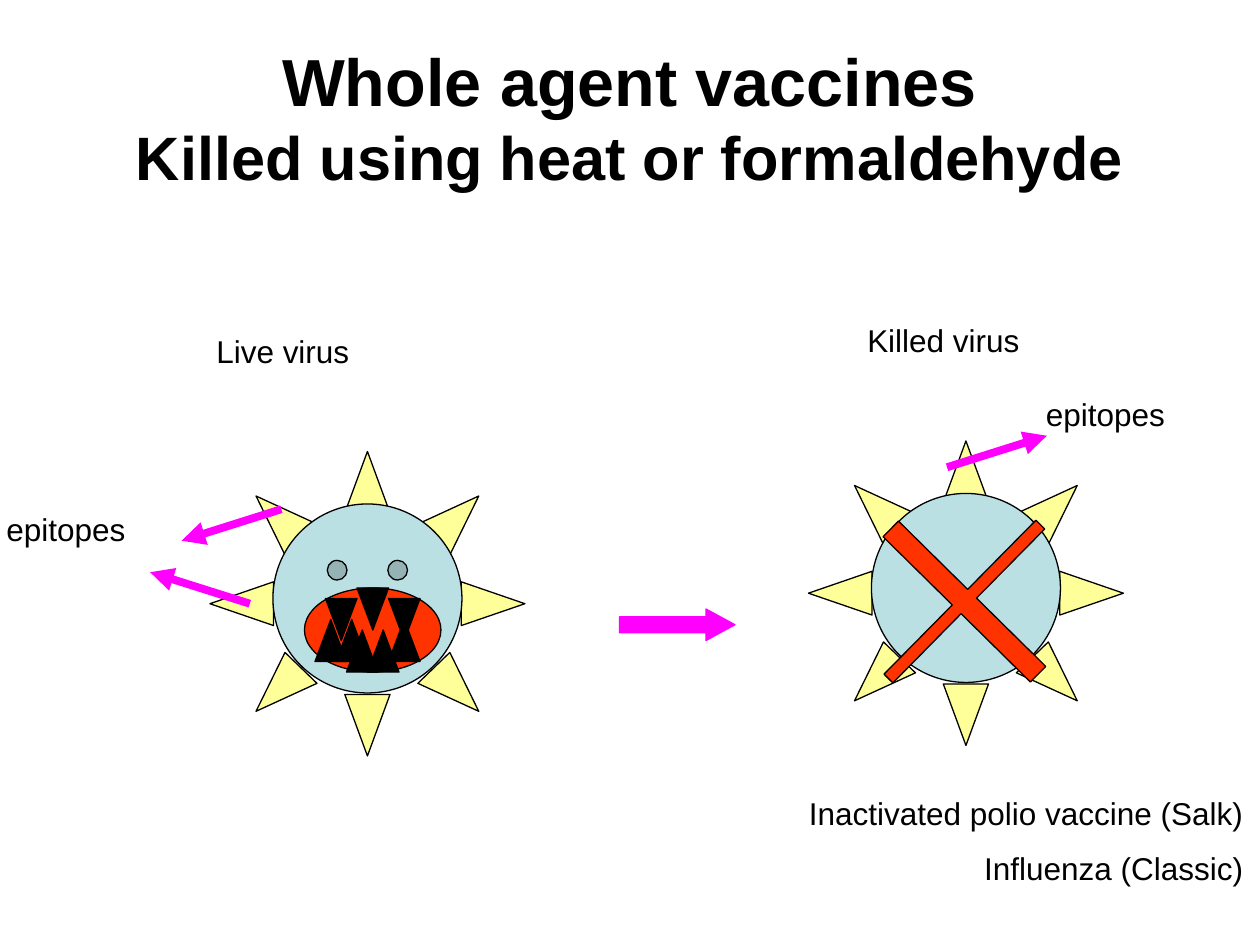
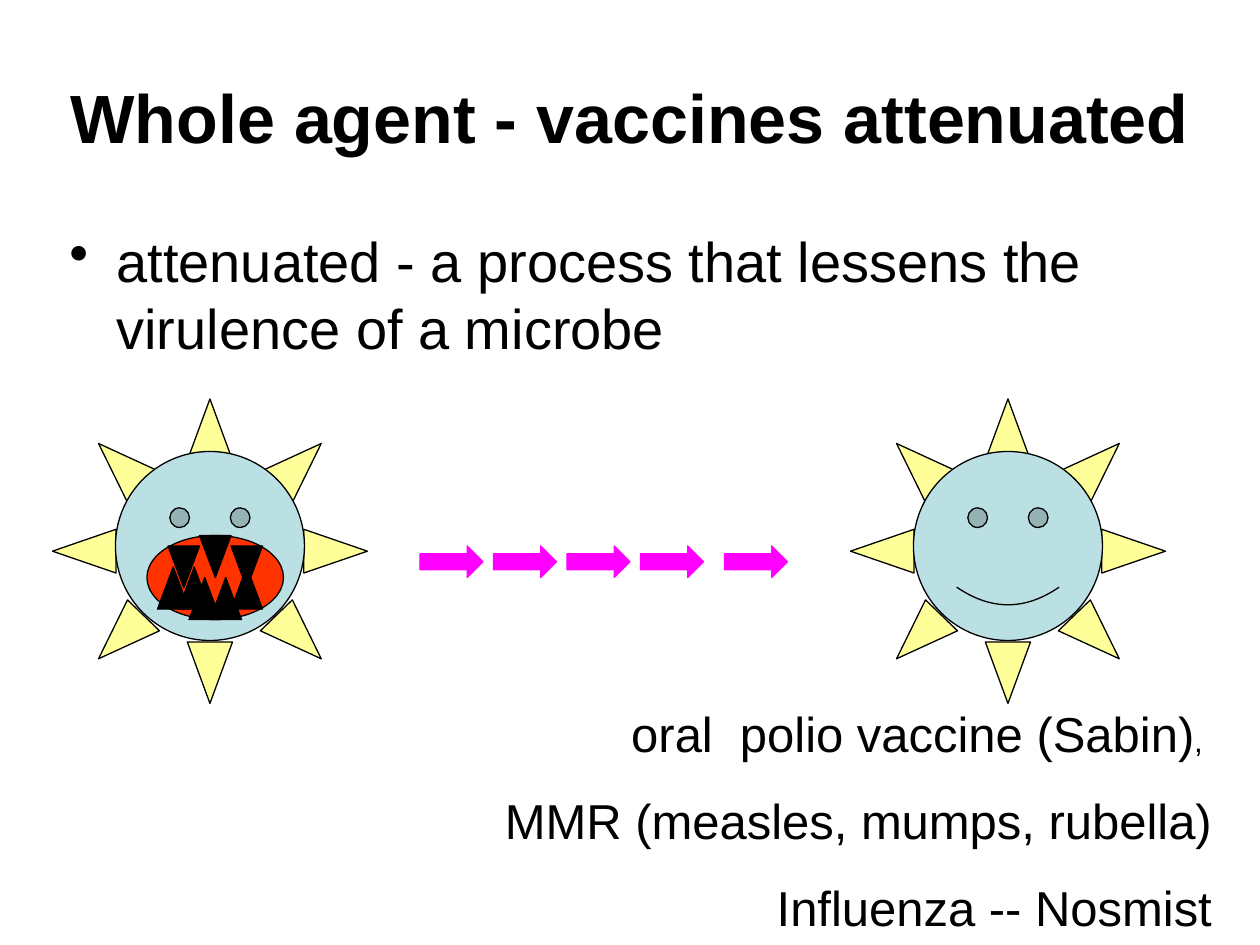
import dataclasses

import lxml.etree
import pptx
import pptx.dml.color
import pptx.enum.shapes
import pptx.enum.text
import pptx.oxml.ns
import pptx.util

PX_PER_INCH = 120
SHAPE = pptx.enum.shapes.MSO_SHAPE
ALIGN = pptx.enum.text.PP_ALIGN
ANCHOR = pptx.enum.text.MSO_ANCHOR


@dataclasses.dataclass(frozen=True)
class Theme:
    font: str = "Arial"
    ink: str = "000000"
    spike: str = "FFFF99"
    body: str = "BBE0E3"
    danger: str = "FF3300"
    arrow: str = "FF00FF"
    title: int = 39
    title_top: int = 38
    title_sub: int = 35
    bullet: int = 32
    example: int = 28
    label: int = 18
    outline: float = 0.75
    pointer: float = 4.5


def px(n):
    return pptx.util.Emu(n * 914400 // PX_PER_INCH)


def rgb(value):
    return pptx.dml.color.RGBColor.from_string(value)


def sub(parent, tag, **attrs):
    return lxml.etree.SubElement(parent, pptx.oxml.ns.qn(tag), attrs)


class Deck:
    def __init__(self, theme):
        self.theme = theme
        self.prs = pptx.Presentation()
        self.prs.slide_width = px(1200)
        self.prs.slide_height = px(900)

    def new_slide(self):
        self.s = self.prs.slides.add_slide(self.prs.slide_layouts[6])
        self.shapes = self.s.shapes

    def start_group(self):
        self.shapes = self.s.shapes.add_group_shape().shapes

    def end_group(self):
        self.shapes = self.s.shapes

    def text(self, box, paragraphs, size=None, bold=False, align=ALIGN.LEFT,
             anchor=ANCHOR.TOP, before=0, wrap=True, bullet=False):
        sp = self.shapes.add_textbox(*map(px, box))
        tf = sp.text_frame
        tf.word_wrap = wrap
        tf.vertical_anchor = anchor
        tf.margin_left = tf.margin_right = tf.margin_top = tf.margin_bottom = px(6)
        for i, runs in enumerate(paragraphs):
            p = tf.paragraphs[0] if i == 0 else tf.add_paragraph()
            p.alignment = align
            p.space_before = pptx.util.Pt(before)
            if bullet:
                pPr = p._p.get_or_add_pPr()
                pPr.set("marL", str(px(45)))
                pPr.set("indent", str(px(-45)))
                sub(pPr, "a:buChar", char="•")
            for item in [runs] if isinstance(runs, str) else runs:
                if item == "\n":
                    p.add_line_break()
                    continue
                words, points = (item, size) if isinstance(item, str) else item
                r = p.add_run()
                r.text = words
                r.font.name = self.theme.font
                r.font.size = pptx.util.Pt(points)
                r.font.bold = bold
                r.font.color.rgb = rgb(self.theme.ink)
        return sp

    def title(self, box, runs):
        self.text(box, [runs], size=self.theme.title, bold=True,
                  align=ALIGN.CENTER, anchor=ANCHOR.MIDDLE)

    def label(self, box, words, **fmt):
        self.text(box, [words], size=self.theme.label, **fmt)

    def shape(self, kind, box, fill, line=None, adj=(), rotation=0):
        sp = self.shapes.add_shape(kind, *map(px, box))
        sp.shadow.inherit = False
        sp.fill.solid()
        sp.fill.fore_color.rgb = rgb(fill)
        sp.line.color.rgb = rgb(line or self.theme.ink)
        sp.line.width = pptx.util.Pt(self.theme.outline)
        sp.rotation = rotation
        for i, value in enumerate(adj):
            sp.adjustments[i] = value
        return sp

    def block_arrow(self, box, head):
        self.shape(SHAPE.RIGHT_ARROW, box, self.theme.arrow,
                   line=self.theme.arrow, adj=(0.5, head))

    def pointer(self, x, y, dx, dy):
        cx = self.shapes.add_connector(
            pptx.enum.shapes.MSO_CONNECTOR.STRAIGHT,
            px(x), px(y), px(x + dx), px(y + dy))
        cx.line.color.rgb = rgb(self.theme.arrow)
        cx.line.width = pptx.util.Pt(self.theme.pointer)
        sub(cx.line._get_or_add_ln(), "a:tailEnd", type="triangle")
        sub(cx._element.spPr, "a:effectLst")

    def virus(self, x, y, face=SHAPE.SMILEY_FACE):
        self.shape(SHAPE.SUN, (x, y, 300, 290), self.theme.spike)
        self.shape(face, (x + 60, y + 50, 180, 180), self.theme.body)

    def fierce_virus(self, x, y):
        self.virus(x, y)
        self.shape(SHAPE.OVAL, (x + 90, y + 130, 130, 80), self.theme.danger)
        lower = [(120, 160), (130, 170), (150, 170), (170, 160), (100, 160)]
        upper = [(140, 130), (110, 140), (170, 140)]
        for teeth, rotation in ((lower, 0), (upper, 180)):
            for dx, dy in teeth:
                self.shape(SHAPE.ISOSCELES_TRIANGLE, (x + dx, y + dy, 30, 40),
                           self.theme.ink, rotation=rotation)

    def killed_virus(self, x, y):
        self.virus(x, y, face=SHAPE.OVAL)
        self.shape(SHAPE.CROSS, (x + 50, y + 50, 197, 206), self.theme.danger,
                   adj=(0.47,), rotation=44.6)


def killed_slide(deck):
    t = deck.theme
    deck.new_slide()
    deck.title((0, 36, 1200, 150),
               [("Whole agent vaccines", t.title_top), "\n",
                ("Killed using heat or formaldehyde", t.title_sub)])
    deck.block_arrow((590, 580, 110, 30), head=0.917)
    deck.text((240, 750, 950, 97),
              ["Inactivated polio vaccine (Salk)", "Influenza (Classic)"],
              size=t.label, align=ALIGN.RIGHT, before=10)

    deck.start_group()
    deck.fierce_virus(200, 430)
    deck.pointer(268, 485, -95, 30)
    deck.pointer(238, 575, -95, -30)
    deck.label((0, 480, 210, 45), "epitopes", before=10)
    deck.end_group()

    deck.start_group()
    deck.killed_virus(770, 420)
    deck.pointer(902, 445, 95, -30)
    deck.label((990, 370, 210, 45), "epitopes", before=10)
    deck.end_group()

    deck.label((200, 310, 140, 45), "Live virus", wrap=False)
    deck.label((820, 300, 158, 45), "Killed virus", wrap=False)


def attenuated_slide(deck):
    t = deck.theme
    deck.new_slide()
    deck.title((60, 36, 1080, 150), "Whole agent - vaccines attenuated")
    deck.text((60, 210, 1080, 594),
              ["attenuated - a process that lessens the virulence of a microbe"],
              size=t.bullet, before=7, bullet=True)

    deck.start_group()
    deck.fierce_virus(50, 380)
    deck.end_group()

    deck.start_group()
    deck.virus(810, 380)
    deck.end_group()

    deck.start_group()
    for x in (400, 470, 540, 610, 690):
        deck.block_arrow((x, 520, 60, 30), head=0.5)
    deck.end_group()

    deck.text((250, 664, 910, 224),
              [["oral  polio vaccine (Sabin)", (", ", t.label)],
               "MMR (measles, mumps, rubella)",
               "Influenza -- Nosmist"],
              size=t.example, align=ALIGN.RIGHT, before=16)


def main():
    deck = Deck(Theme())
    killed_slide(deck)
    attenuated_slide(deck)
    deck.prs.save("out.pptx")


if __name__ == "__main__":
    main()
